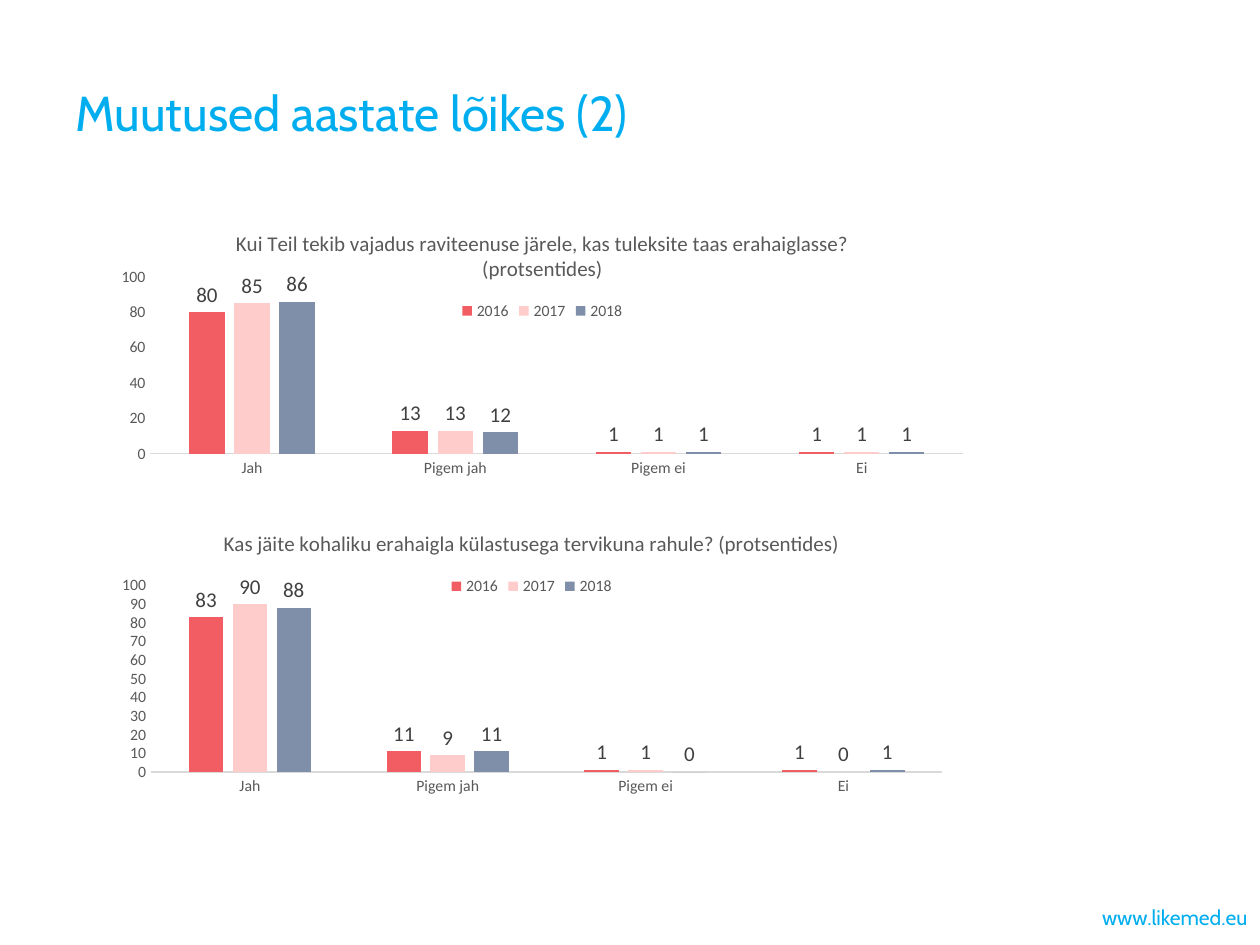
from dataclasses import dataclass

from lxml import etree
from pptx import Presentation
from pptx.chart.data import CategoryChartData
from pptx.dml.color import RGBColor
from pptx.enum.chart import XL_CHART_TYPE, XL_LABEL_POSITION, XL_LEGEND_POSITION, XL_TICK_MARK
from pptx.enum.text import MSO_ANCHOR, MSO_AUTO_SIZE, PP_ALIGN
from pptx.oxml.ns import qn
from pptx.util import Inches, Pt

CLUSTERED = XL_CHART_TYPE.COLUMN_CLUSTERED
OUTSIDE_END = XL_LABEL_POSITION.OUTSIDE_END
LEGEND_TOP = XL_LEGEND_POSITION.TOP
NO_TICK = XL_TICK_MARK.NONE
MIDDLE = MSO_ANCHOR.MIDDLE
LEFT, RIGHT = PP_ALIGN.LEFT, PP_ALIGN.RIGHT
NO_FIT = MSO_AUTO_SIZE.NONE

TITLE_ONLY = 5


@dataclass(frozen=True)
class Theme:
    heading_font: str = "Cabin"
    chart_font: str = "Calibri"
    accent: str = "00AEEF"
    muted: str = "595959"
    label: str = "404040"
    axis_line: str = "D9D9D9"
    series: tuple = ("F25C63", "FFCCCC", "7F8FA9")
    title_size: int = 28
    text_size: int = 12
    axis_size: int = 9


THEME = Theme()
ANSWERS = ("Jah", "Pigem jah", "Pigem ei", "Ei")

# Boxes are left, top, width, height in inches; plots are shares of the chart.
TITLE_BOX = (0.5, 0.08, 9, 1.61)
FOOTER_BOX = (6.83, 7.08, 3.17, 0.4)
CHARTS = (
    {
        "box": (0.81, 1.69, 6.99, 2.18),
        "question": "Kui Teil tekib vajadus raviteenuse järele, "
                    "kas tuleksite taas erahaiglasse? (protsentides)",
        "results": {"2016": (80, 13, 1, 1), "2017": (85, 13, 1, 1), "2018": (86, 12, 1, 1)},
        "plot": (0.055, 0.233, 0.923, 0.644),
        "step": 20,
    },
    {
        "box": (0.81, 4.07, 6.82, 2.31),
        "question": "Kas jäite kohaliku erahaigla külastusega "
                    "tervikuna rahule? (protsentides)",
        "results": {"2016": (83, 11, 1, 1), "2017": (90, 9, 1, 0), "2018": (88, 11, 0, 1)},
        "plot": (0.057, 0.25, 0.921, 0.641),
        "step": 10,
    },
)


def inches(box):
    return [Inches(v) for v in box]


def set_font(font, name, size, color):
    font.name = name
    font.size = Pt(size)
    font.bold = False
    font.color.rgb = RGBColor.from_string(color)


def write_line(sp, text, size, align):
    tf = sp.text_frame
    tf.word_wrap = True
    tf.auto_size = NO_FIT
    tf.vertical_anchor = MIDDLE
    p = tf.paragraphs[0]
    p.text = text
    p.alignment = align
    set_font(p.font, THEME.heading_font, size, THEME.accent)


def add_title(s, box, text):
    sp = s.shapes.title
    sp.left, sp.top, sp.width, sp.height = inches(box)
    write_line(sp, text, THEME.title_size, LEFT)


def add_footer(s, box, text):
    write_line(s.shapes.add_textbox(*inches(box)), text, THEME.text_size, RIGHT)


def place_plot(chart, plot):
    """Fix the inner plot area at shares of the chart's size."""
    area = chart._chartSpace.chart.plotArea
    for old in area.findall(qn("c:layout")):
        area.remove(old)
    layout = etree.Element(qn("c:layout"))
    manual = etree.SubElement(layout, qn("c:manualLayout"))
    settings = [("layoutTarget", "inner"), ("xMode", "edge"), ("yMode", "edge")]
    for tag, value in settings + list(zip("xywh", plot)):
        etree.SubElement(manual, qn(f"c:{tag}")).set("val", str(value))
    area.insert(0, layout)


def format_axes(chart, step):
    for axis in (chart.category_axis, chart.value_axis):
        axis.major_tick_mark = axis.minor_tick_mark = NO_TICK
        axis.has_major_gridlines = False
        set_font(axis.tick_labels.font, THEME.chart_font, THEME.axis_size, THEME.muted)
    line = chart.category_axis.format.line
    line.color.rgb = RGBColor.from_string(THEME.axis_line)
    line.width = Pt(0.75)
    values = chart.value_axis
    values.minimum_scale, values.maximum_scale, values.major_unit = 0, 100, step
    values.format.line.fill.background()


def format_bars(bars):
    bars.gap_width, bars.overlap = 219, -27
    bars.vary_by_categories = False
    for series, color in zip(bars.series, THEME.series):
        series.format.fill.solid()
        series.format.fill.fore_color.rgb = RGBColor.from_string(color)
        series.invert_if_negative = False
        labels = series.data_labels
        labels.show_value = True
        labels.position = OUTSIDE_END
        set_font(labels.font, THEME.chart_font, THEME.text_size, THEME.label)


def add_survey_chart(s, box, question, results, plot, step):
    data = CategoryChartData()
    data.categories = ANSWERS
    for year, shares in results.items():
        data.add_series(year, shares)
    chart = s.shapes.add_chart(CLUSTERED, *inches(box), data).chart
    chart.font.name, chart.font.size = THEME.chart_font, Pt(10)

    chart.has_title = True
    p = chart.chart_title.text_frame.paragraphs[0]
    p.text = question
    set_font(p.font, THEME.chart_font, THEME.text_size, THEME.muted)
    chart.chart_title.include_in_layout = False

    chart.has_legend = True
    chart.legend.position = LEGEND_TOP
    chart.legend.include_in_layout = False
    set_font(chart.legend.font, THEME.chart_font, THEME.axis_size, THEME.muted)

    place_plot(chart, plot)
    format_axes(chart, step)
    format_bars(chart.plots[0])


def main():
    prs = Presentation()
    prs.slide_width, prs.slide_height = Inches(10), Inches(7.5)
    s = prs.slides.add_slide(prs.slide_layouts[TITLE_ONLY])
    add_title(s, TITLE_BOX, "Muutused aastate lõikes (2)")
    add_footer(s, FOOTER_BOX, "www.likemed.eu")
    for chart in CHARTS:
        add_survey_chart(s, **chart)
    prs.save("out.pptx")


if __name__ == "__main__":
    main()
